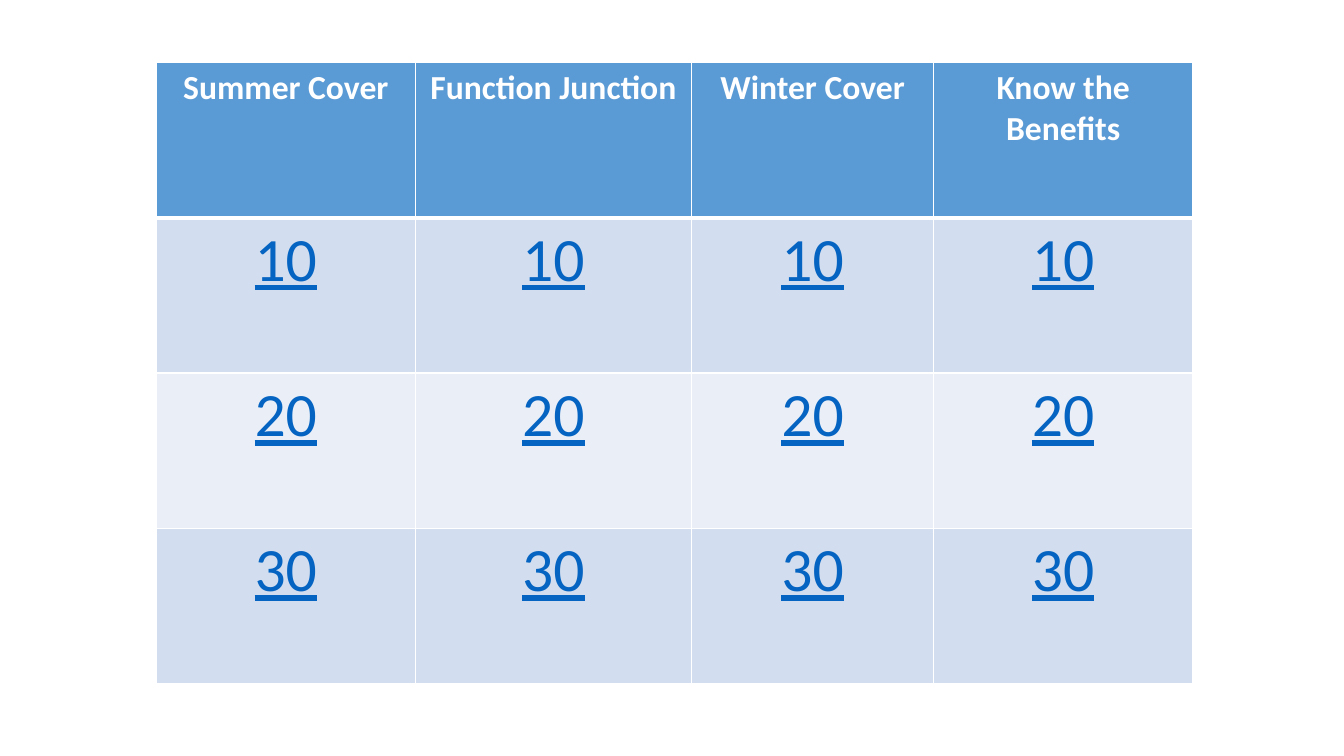
"""Build a quiz board slide with four topics and three point levels."""
from lxml.etree import SubElement as Sub
from pptx import Presentation
from pptx.dml.color import RGBColor as Rgb
from pptx.enum.text import PP_ALIGN as Align
from pptx.oxml.ns import qn
from pptx.util import Inches, Pt

HUES = {"head": "5B9BD5", "odd": "D2DEEF", "even": "EAEFF7",
        "white": "FFFFFF", "link": "0563C1"}
TOPICS = ["Summer Cover", "Function Junction", "Winter Cover", "Know the Benefits"]
POINTS = [10, 20, 30]
COLS = [2.57, 2.74, 2.4, 2.57]
ROW = 1.54


def edge(cell, side, width):
    line = Sub(cell._tc.get_or_add_tcPr(), qn(f"a:ln{side}"), w=str(Pt(width)))
    paint = Sub(line, qn("a:solidFill"))
    Sub(paint, qn("a:srgbClr"), val=HUES["white"])


deck = Presentation()
deck.slide_width, deck.slide_height = Inches(13.33), Inches(7.5)
slide = deck.slides.add_slide(deck.slide_layouts[6])

rows = [TOPICS] + [[str(value)] * len(TOPICS) for value in POINTS]
frame = slide.shapes.add_table(len(rows), len(COLS), Inches(1.55), Inches(0.62),
                               Inches(sum(COLS)), Inches(ROW * len(rows)))
board = frame.table
for col, width in zip(board.columns, COLS):
    col.width = Inches(width)

for r, texts in enumerate(rows):
    board.rows[r].height = Inches(ROW)
    top = r == 0
    hue = "head" if top else "odd" if r % 2 else "even"
    for c, text in enumerate(texts):
        cell = board.cell(r, c)
        for side in "LRTB":
            thick = (r, side) in [(0, "B"), (1, "T")]
            edge(cell, side, 3 if thick else 1)
        cell.fill.solid()
        cell.fill.fore_color.rgb = Rgb.from_string(HUES[hue])
        para = cell.text_frame.paragraphs[0]
        para.alignment = Align.CENTER
        run = para.add_run()
        run.text = text
        font = run.font
        font.name = "Calibri"
        font.size = Pt(24 if top else 44)
        font.bold = top
        font.underline = not top
        font.color.rgb = Rgb.from_string(HUES["white" if top else "link"])

deck.save("out.pptx")
